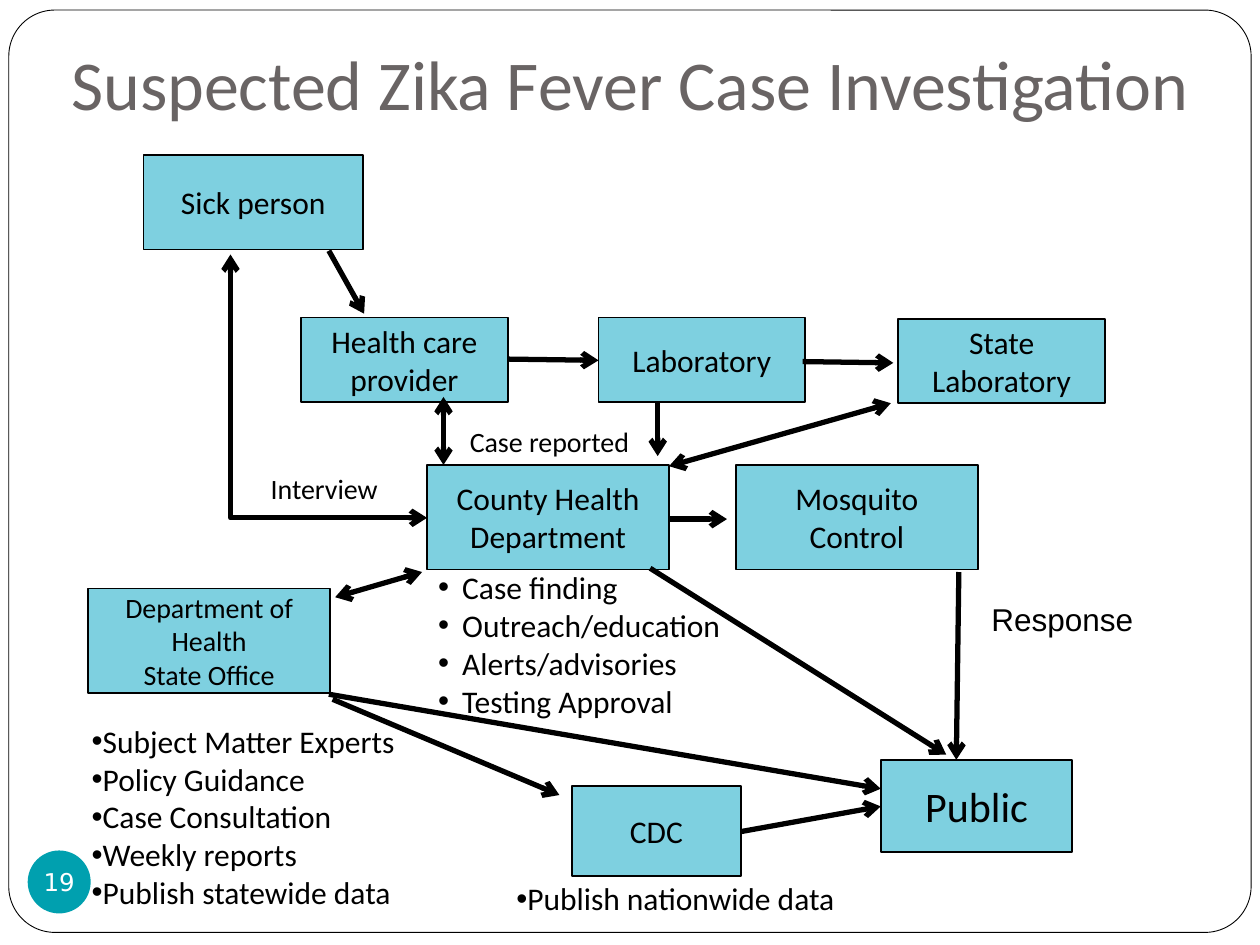
from dataclasses import dataclass

import pptx
import pptx.dml.color
import pptx.enum.shapes
import pptx.enum.text
import pptx.oxml.ns
import pptx.oxml.xmlchemy
import pptx.util
from lxml import etree
from pptx.util import Inches

BLACK = pptx.dml.color.RGBColor(0x00, 0x00, 0x00)
WHITE = pptx.dml.color.RGBColor(0xFF, 0xFF, 0xFF)
GREY = pptx.dml.color.RGBColor(0x69, 0x64, 0x64)
AQUA = pptx.dml.color.RGBColor(0x7E, 0xD0, 0xE0)
TEAL = pptx.dml.color.RGBColor(0x00, 0xA0, 0xAF)

SHAPES = pptx.enum.shapes.MSO_SHAPE
CONNECTORS = pptx.enum.shapes.MSO_CONNECTOR
ANCHOR = pptx.enum.text.MSO_ANCHOR
ALIGN = pptx.enum.text.PP_ALIGN
NO_MARGINS = dict.fromkeys(
    ("margin_left", "margin_top", "margin_right", "margin_bottom"), 0)


@dataclass(frozen=True)
class Box:
    text: str
    left: float
    top: float
    width: float
    height: float
    size: int = 18


@dataclass(frozen=True)
class Label:
    lines: tuple
    left: float
    top: float
    width: float
    height: float
    size: int = 18
    font: str = "Calibri"
    bullet: bool = False
    indent: float = 0


@dataclass(frozen=True)
class Arrow:
    start: tuple
    end: tuple
    two_way: bool = False
    bent: bool = False


BOXES = (
    Box("Sick person", 1.14, 1.23, 1.74, 0.75),
    Box("Health care provider", 2.39, 2.52, 1.64, 0.67),
    Box("Laboratory", 4.75, 2.52, 1.64, 0.67),
    Box("State Laboratory", 7.13, 2.53, 1.64, 0.67),
    Box("County Health Department", 3.39, 3.69, 1.92, 0.83),
    Box("Mosquito Control", 5.84, 3.69, 1.92, 0.83),
    Box("Department of Health\vState Office", 0.7, 4.67, 1.92, 0.83, 16),
    Box("CDC", 4.54, 6.24, 1.34, 0.71),
    Box("Public", 6.99, 6.03, 1.52, 0.73, 24),
)

ARROWS = (
    Arrow((2.61, 1.99), (2.89, 2.49)),
    Arrow((4.03, 2.85), (4.75, 2.86)),
    Arrow((6.37, 2.87), (7.09, 2.88)),
    Arrow((5.22, 3.19), (5.22, 3.62)),
    Arrow((5.31, 4.12), (5.77, 4.12)),
    Arrow((5.16, 4.51), (7.51, 5.99)),
    Arrow((7.61, 4.54), (7.59, 6.03)),
    Arrow((2.64, 5.55), (4.44, 6.31)),
    Arrow((2.61, 5.51), (6.99, 6.26)),
    Arrow((5.88, 6.6), (6.99, 6.4)),
    Arrow((2.66, 4.74), (3.35, 4.54), two_way=True),
    Arrow((5.31, 3.7), (7.07, 3.2), two_way=True),
    Arrow((3.52, 3.69), (3.52, 3.15), two_way=True),
    Arrow((3.39, 4.11), (1.83, 2.02), two_way=True, bent=True),
)

LABELS = (
    Label(("Case reported",), 3.63, 3.32, 1.49, 0.37, 16),
    Label(("Interview",), 2.05, 3.69, 1.1, 0.37, 16),
    Label(("Response",), 7.77, 4.71, 1.34, 0.4, font="Arial"),
    Label(("Case finding", "Outreach/education", "Alerts/advisories",
           "Testing Approval"), 3.38, 4.46, 2.47, 1.31, bullet=True, indent=0.19),
    Label(("Subject Matter Experts", "Policy Guidance", "Case Consultation",
           "Weekly reports", "Publish statewide data"),
          0.63, 5.68, 2.67, 1.62, bullet=True),
    Label(("Publish nationwide data",), 4, 6.93, 2.8, 0.4, bullet=True),
)


def apply_format(target: object, values: dict) -> None:
    for name, value in values.items():
        setattr(target, name, value)


def write_lines(shape, lines: tuple, size: int, font="Calibri", color=BLACK,
                align=ALIGN.LEFT, **frame_format) -> None:
    """Fill a shape with one paragraph per line, all in one style."""
    frame = shape.text_frame
    apply_format(frame, frame_format)
    frame.text = "\n".join(lines)
    for paragraph in frame.paragraphs:
        paragraph.alignment = align
        for run in paragraph.runs:
            apply_format(run.font, {"size": pptx.util.Pt(size), "name": font})
            run.font.color.rgb = color


def add_filled_shape(slide, kind, left: float, top: float, width: float,
                     height: float, fill, line_width: float = 0):
    shape = slide.shapes.add_shape(
        kind, Inches(left), Inches(top), Inches(width), Inches(height))
    shape.shadow.inherit = False
    shape.fill.solid()
    shape.fill.fore_color.rgb = fill
    if line_width:
        shape.line.color.rgb = BLACK
        shape.line.width = pptx.util.Pt(line_width)
    else:
        shape.line.fill.background()
    return shape


def add_box(slide, box: Box) -> None:
    shape = add_filled_shape(slide, SHAPES.RECTANGLE, box.left, box.top,
                             box.width, box.height, AQUA, 1)
    write_lines(shape, (box.text,), box.size, align=ALIGN.CENTER,
                vertical_anchor=ANCHOR.MIDDLE, word_wrap=True)


def add_label(slide, label: Label) -> None:
    shape = slide.shapes.add_textbox(Inches(label.left), Inches(label.top),
                                     Inches(label.width), Inches(label.height))
    write_lines(shape, label.lines, label.size, label.font, word_wrap=False)
    if label.bullet:
        for paragraph in shape.text_frame.paragraphs:
            add_bullet(paragraph, label.indent)


def add_bullet(paragraph, indent: float) -> None:
    properties = paragraph._p.get_or_add_pPr()
    properties.set("marL", str(Inches(indent)))
    properties.set("indent", str(-Inches(indent)))
    font = etree.SubElement(properties, pptx.oxml.ns.qn("a:buFont"))
    font.set("typeface", "Arial")
    bullet = etree.SubElement(properties, pptx.oxml.ns.qn("a:buChar"))
    bullet.set("char", "•")


def add_arrow(slide, arrow: Arrow) -> None:
    kind = CONNECTORS.ELBOW if arrow.bent else CONNECTORS.STRAIGHT
    points = (Inches(value) for value in arrow.start + arrow.end)
    connector = slide.shapes.add_connector(kind, *points)
    connector.line.color.rgb = BLACK
    connector.line.width = pptx.util.Pt(3)
    properties = connector._element.spPr
    if arrow.bent:
        geometry = properties.find(pptx.oxml.ns.qn("a:prstGeom"))
        geometry.set("prst", "bentConnector2")
    line = connector.line._get_or_add_ln()
    for end in ("a:headEnd", "a:tailEnd") if arrow.two_way else ("a:tailEnd",):
        etree.SubElement(line, pptx.oxml.ns.qn(end)).set("type", "arrow")
    etree.SubElement(properties, pptx.oxml.ns.qn("a:effectLst"))


def main() -> None:
    presentation = pptx.Presentation()
    apply_format(presentation, {"slide_width": Inches(10),
                                "slide_height": Inches(7.5)})
    slide = presentation.slides.add_slide(presentation.slide_layouts[6])

    border = add_filled_shape(slide, SHAPES.ROUNDED_RECTANGLE,
                              0.07, 0.08, 9.86, 7.32, WHITE, 0.5)
    border.adjustments[0] = 0.05
    title = slide.shapes.add_textbox(0, Inches(0.17), Inches(10), Inches(0.92))
    write_lines(title, ("Suspected Zika Fever Case Investigation",), 40,
                color=GREY, align=ALIGN.CENTER, word_wrap=True,
                vertical_anchor=ANCHOR.BOTTOM, margin_bottom=Inches(0.1))

    for box in BOXES:
        add_box(slide, box)
    for arrow in ARROWS:
        add_arrow(slide, arrow)
    badge = add_filled_shape(slide, SHAPES.OVAL, 0.22, 6.75, 0.5, 0.5, TEAL)
    write_lines(badge, ("19",), 14, "DejaVu Sans", WHITE, ALIGN.CENTER,
                vertical_anchor=ANCHOR.MIDDLE, word_wrap=False, **NO_MARGINS)
    for label in LABELS:
        add_label(slide, label)

    presentation.save("out.pptx")


if __name__ == "__main__":
    main()
